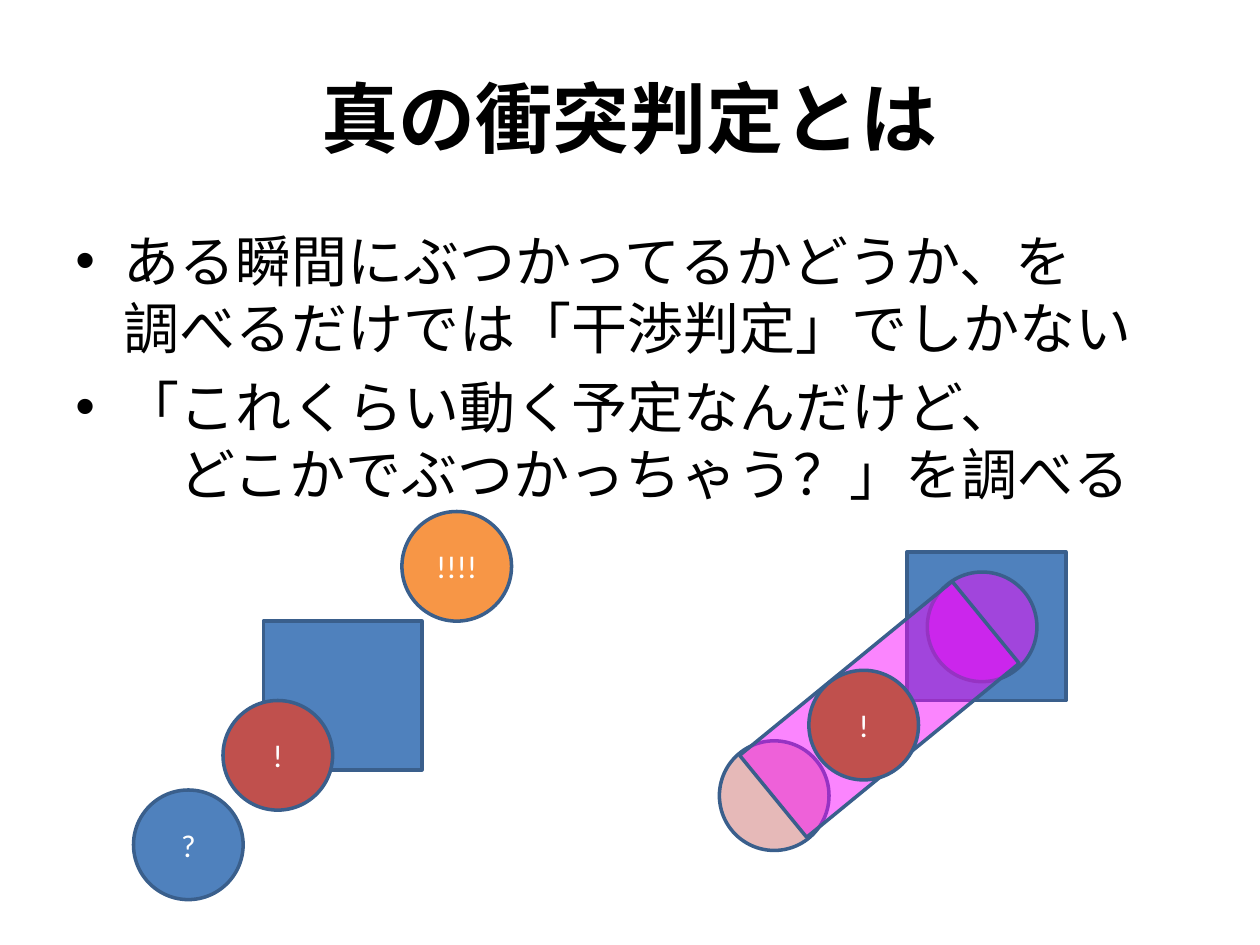
from lxml.etree import SubElement
from pptx import Presentation
from pptx.dml.color import RGBColor
from pptx.enum.shapes import MSO_SHAPE
from pptx.enum.text import MSO_ANCHOR, PP_ALIGN
from pptx.oxml.ns import qn
from pptx.util import Inches, Pt

BLACK = RGBColor(0x00, 0x00, 0x00)
WHITE = RGBColor(0xFF, 0xFF, 0xFF)
BLUE = RGBColor(0x4F, 0x81, 0xBD)
OUTLINE = RGBColor(0x3A, 0x5F, 0x8C)
RED = RGBColor(0xC0, 0x50, 0x4D)
ORANGE = RGBColor(0xF7, 0x96, 0x46)
PINK = RGBColor(0xE6, 0xB9, 0xB8)
MAGENTA = RGBColor(0xF7, 0x07, 0xFD)
JAPANESE, LATIN = "Noto Sans CJK JP", "Calibri"

TITLE = "真の衝突判定とは"
BULLETS = [
    "ある瞬間にぶつかってるかどうか、を\v調べるだけでは「干渉判定」でしかない",
    "「これくらい動く予定なんだけど、\v\u3000どこかでぶつかっちゃう？」を調べる".replace("\u3000", "　"),
]

BALL = (0.87, 0.87)
WALL = (1.26, 1.18)
SWEEP = (2.18, 0.84)
RECT, OVAL = MSO_SHAPE.RECTANGLE, MSO_SHAPE.OVAL
# preset, left and top, size, fill, label, opacity in %, rotation
INTERFERENCE_CHECK = [
    (RECT, (2.09, 4.93), WALL, BLUE, "", 100, 0),
    (OVAL, (1.06, 6.27), BALL, BLUE, "?", 100, 0),
    (OVAL, (1.77, 5.56), BALL, RED, "!", 100, 0),
    (OVAL, (3.19, 4.06), BALL, ORANGE, "!!!!", 100, 0),
]
COLLISION_CHECK = [
    (RECT, (7.2, 4.38), WALL, BLUE, "", 100, 0),
    (OVAL, (5.71, 5.88), BALL, PINK, "", 100, 0),
    (OVAL, (7.36, 4.54), BALL, MAGENTA, "", 49, 0),
    (RECT, (5.89, 5.21), SWEEP, MAGENTA, "", 49, 320.7),
    (OVAL, (6.42, 5.32), BALL, RED, "!", 100, 0),
]


def write(paragraph, text, size, font, color, bold=False, align=PP_ALIGN.LEFT):
    paragraph.text = text
    paragraph.alignment = align
    for run in paragraph.runs:
        run.font.size = Pt(size)
        run.font.name = font
        run.font.bold = bold
        run.font.color.rgb = color
        SubElement(run.font._element, qn("a:ea"), typeface=JAPANESE)


def add_bullet(paragraph, indent):
    properties = paragraph._p.get_or_add_pPr()
    properties.set("marL", str(indent))
    properties.set("indent", str(-indent))
    SubElement(properties, qn("a:buFont"), typeface="Arial")
    SubElement(properties, qn("a:buChar"), char="•")


def add_figure(slide, preset, corner, size, fill, label, opacity, rotation):
    figure = slide.shapes.add_shape(preset, *map(Inches, corner + size))
    figure.shadow.inherit = False
    figure.rotation = rotation
    figure.fill.solid()
    figure.fill.fore_color.rgb = fill
    if opacity < 100:
        color = figure.fill._xPr.find(qn("a:solidFill"))[0]
        SubElement(color, qn("a:alpha"), val=str(opacity * 1000))
    figure.line.color.rgb = OUTLINE
    figure.line.width = Pt(2)
    if label:
        figure.text_frame.vertical_anchor = MSO_ANCHOR.MIDDLE
        write(figure.text_frame.paragraphs[0], label, 18, LATIN, WHITE,
              align=PP_ALIGN.CENTER)


def main():
    deck = Presentation()
    deck.slide_width, deck.slide_height = Inches(10), Inches(7.5)
    slide = deck.slides.add_slide(deck.slide_layouts[5])

    title = slide.shapes.title
    title.left, title.top = Inches(0.5), Inches(0.3)
    title.width, title.height = Inches(9), Inches(1.25)
    title.text_frame.vertical_anchor = MSO_ANCHOR.MIDDLE
    write(title.text_frame.paragraphs[0], TITLE, 44, JAPANESE, BLACK,
          bold=True, align=PP_ALIGN.CENTER)

    body = slide.shapes.add_textbox(
        Inches(0.5), Inches(1.75), Inches(9), Inches(4.95)).text_frame
    body.word_wrap = True
    for index, bullet in enumerate(BULLETS):
        paragraph = body.add_paragraph() if index else body.paragraphs[0]
        write(paragraph, bullet, 32, JAPANESE, BLACK)
        paragraph.line_spacing = Pt(38.4)
        paragraph.space_before = Pt(6.4)
        add_bullet(paragraph, Inches(0.38))

    for figure in INTERFERENCE_CHECK + COLLISION_CHECK:
        add_figure(slide, *figure)

    deck.save("out.pptx")


if __name__ == "__main__":
    main()
